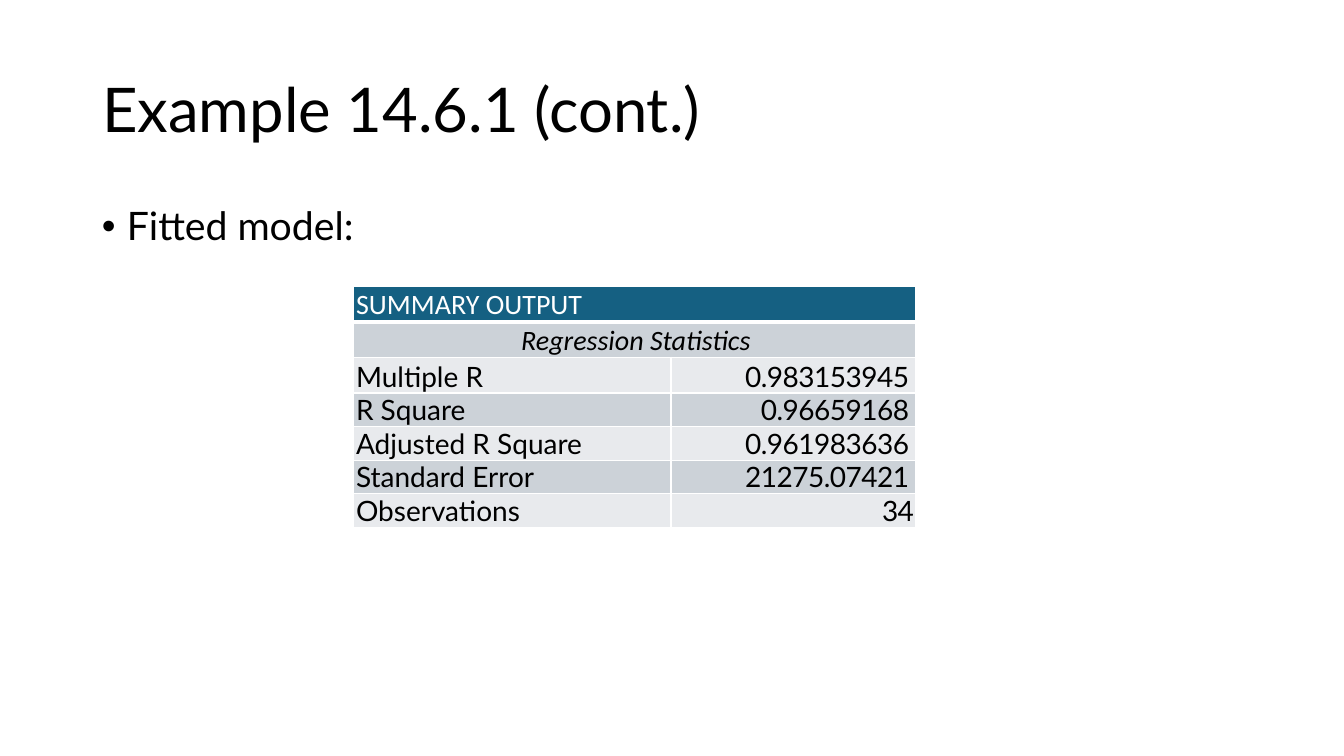
from lxml import etree
from pptx import Presentation
from pptx.dml.color import RGBColor
from pptx.enum.text import MSO_ANCHOR, MSO_AUTO_SIZE, PP_ALIGN
from pptx.oxml.ns import qn
from pptx.util import Emu, Pt

LEFT, CENTER, RIGHT = PP_ALIGN.LEFT, PP_ALIGN.CENTER, PP_ALIGN.RIGHT
MIDDLE, TOP = MSO_ANCHOR.MIDDLE, MSO_ANCHOR.TOP
NO_FIT = MSO_AUTO_SIZE.NONE

BLACK, WHITE, TEAL = "000000", "FFFFFF", "156082"
BANDS = ("E8EAED", "CCD2D8")
STATISTICS = [
    ("Multiple R", "0.983153945"),
    ("R Square", "0.96659168"),
    ("Adjusted R Square", "0.961983636"),
    ("Standard Error", "21275.07421"),
    ("Observations", "34"),
]
COL_WIDTHS = (318, 245)
ROW_HEIGHTS = (33, 33, 33, 30, 30, 30, 27)


def px(n):
    return Emu(round(n * 914400 / 100.8))


def rgb(value):
    return RGBColor.from_string(value)


def style(p, size, font="Lato", color=BLACK, italic=False, align=LEFT):
    p.alignment = align
    for r in p.runs:
        r.font.size = Pt(size)
        r.font.name = font
        r.font.color.rgb = rgb(color)
        r.font.italic = italic


def indent(p, left, first=0):
    pPr = p._p.get_or_add_pPr()
    pPr.set("marL", str(px(left)))
    pPr.set("indent", str(px(first)))
    return pPr


def add_title(s, text):
    title = s.shapes.title
    title.left, title.top, title.width, title.height = px(92), px(40), px(1160), px(146)
    tf = title.text_frame
    tf.text = text
    tf.auto_size = NO_FIT
    tf.vertical_anchor = MIDDLE
    p = tf.paragraphs[0]
    p.line_spacing = 0.9
    style(p, 44)


def add_bullet(s, text):
    tf = s.shapes.add_textbox(px(92), px(202), px(1160), px(480)).text_frame
    tf.word_wrap = True
    tf.text = text
    p = tf.paragraphs[0]
    p.line_spacing = 0.9
    p.space_before = Pt(10)
    style(p, 28)
    pPr = indent(p, 25, -25)
    etree.SubElement(pPr, qn("a:buFont")).set("typeface", "Arial")
    etree.SubElement(pPr, qn("a:buChar")).set("char", "•")


def set_borders(cell, bottom=1):
    tcPr = cell._tc.get_or_add_tcPr()
    widths = {"a:lnL": 1, "a:lnR": 1, "a:lnT": 1, "a:lnB": bottom}
    for i, (side, width) in enumerate(widths.items()):
        ln = etree.Element(qn(side), w=str(Pt(width)))
        fill = etree.SubElement(ln, qn("a:solidFill"))
        etree.SubElement(fill, qn("a:srgbClr")).set("val", WHITE)
        tcPr.insert(i, ln)


def set_cell(cell, text, fill, top=0, right=0, left=3, **look):
    cell.margin_left = cell.margin_bottom = 0
    cell.margin_top, cell.margin_right = px(top), px(right)
    cell.vertical_anchor = TOP
    cell.fill.solid()
    cell.fill.fore_color.rgb = rgb(fill)
    cell.text_frame.text = text
    p = cell.text_frame.paragraphs[0]
    style(p, 20, **look)
    indent(p, left)
    if top:
        p.space_before = Pt(1.2)
    return p


def add_summary_table(s):
    shape = s.shapes.add_table(len(ROW_HEIGHTS), len(COL_WIDTHS), px(353), px(286),
                               px(sum(COL_WIDTHS)), px(sum(ROW_HEIGHTS)))
    table = shape.table
    table.first_row = table.horz_banding = False
    for col, width in zip(table.columns, COL_WIDTHS):
        col.width = px(width)
    for row, height in zip(table.rows, ROW_HEIGHTS):
        row.height = px(height)

    # Two heading rows across both columns
    for i in range(2):
        table.cell(i, 0).merge(table.cell(i, 1))
    set_cell(table.cell(0, 0), "SUMMARY OUTPUT", TEAL, top=2, font="Calibri", color=WHITE)
    set_cell(table.cell(1, 0), "Regression Statistics", BANDS[1], top=2,
             font="Calibri", italic=True, align=CENTER)

    # Statistic names and values
    for i, (name, value) in enumerate(STATISTICS):
        band, top = BANDS[i % 2], 2 if i == 0 else 0
        set_cell(table.cell(i + 2, 0), name, band, top)
        right = 7 if "." in value else 2
        p = set_cell(table.cell(i + 2, 1), value, band, top, right, left=0, align=RIGHT)
        p.runs[0].font._element.set("spc", "-40")

    # White grid, heavier under the heading
    for i in range(len(ROW_HEIGHTS)):
        for j in range(len(COL_WIDTHS)):
            set_borders(table.cell(i, j), bottom=3 if i == 0 else 1)


def main():
    prs = Presentation()
    prs.slide_width, prs.slide_height = px(1344), px(756)
    s = prs.slides.add_slide(prs.slide_layouts[5])
    add_title(s, "Example 14.6.1 (cont.)")
    add_bullet(s, "Fitted model:")
    add_summary_table(s)
    prs.save("out.pptx")


if __name__ == "__main__":
    main()
